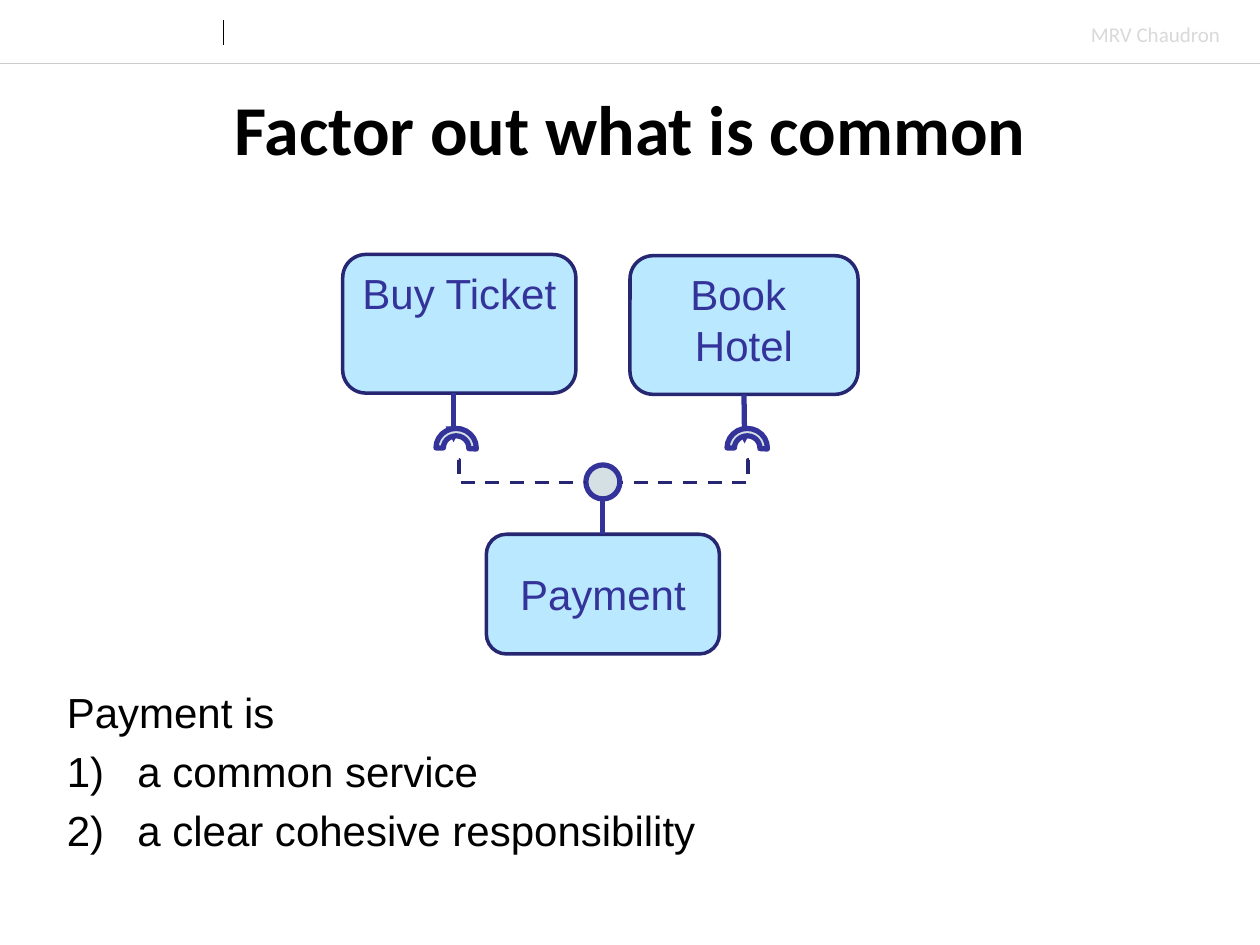
from lxml import etree
from pptx import Presentation
from pptx.dml.color import RGBColor
from pptx.enum.dml import MSO_LINE
from pptx.enum.shapes import MSO_CONNECTOR, MSO_SHAPE
from pptx.enum.text import MSO_ANCHOR, MSO_AUTO_SIZE, PP_ALIGN
from pptx.oxml.ns import qn
from pptx.util import Inches, Pt

STRAIGHT, ELBOW = MSO_CONNECTOR.STRAIGHT, MSO_CONNECTOR.ELBOW
ROUNDED, OVAL, ARC = MSO_SHAPE.ROUNDED_RECTANGLE, MSO_SHAPE.OVAL, MSO_SHAPE.BLOCK_ARC
TOP, MIDDLE, CENTER = MSO_ANCHOR.TOP, MSO_ANCHOR.MIDDLE, PP_ALIGN.CENTER
COLORS = {name: RGBColor.from_string(value) for name, value in {
    "black": "000000", "rule": "CCCCCC", "author": "D9D9D9", "box": "B9E8FF",
    "border": "262673", "ink": "333399", "port": "D5E0E5"}.items()}

prs = Presentation()
prs.slide_width, prs.slide_height = Inches(10), Inches(7.5)
COL, ROW = prs.slide_width / 100, prs.slide_height / 75
slide = prs.slides.add_slide(prs.slide_layouts[1])
shapes = slide.shapes


def grid(x, y, x2, y2):
    """Turn two column and row pairs into slide lengths."""
    return int(x * COL), int(y * ROW), int(x2 * COL), int(y2 * ROW)


def connect(kind, ends, color, width):
    """Draw a connector without a shadow."""
    line = shapes.add_connector(kind, *grid(*ends))
    line.line.color.rgb, line.line.width = COLORS[color], Pt(width)
    etree.SubElement(line._element.spPr, qn("a:effectLst"))
    return line


# Header
connect(STRAIGHT, (0, 5, 100, 5), "rule", 0.25)
connect(STRAIGHT, (17.7, 1.6, 17.7, 3.6), "black", 0.5)
author = shapes.add_textbox(*grid(85.6, 1.2, 12.3, 3)).text_frame
author.word_wrap = False
author.text = "MRV Chaudron"
font = author.paragraphs[0].font
font.name, font.size, font.color.rgb = "Calibri", Pt(12), COLORS["author"]

# Title
title = shapes.title
title.left, title.top, title.width, title.height = grid(0, 6, 100, 8.3)
title.text_frame.text = "Factor out what is common"
title.text_frame.vertical_anchor = MIDDLE
heading = title.text_frame.paragraphs[0]
heading.alignment = CENTER
font = heading.font
font.name, font.size, font.bold, font.color.rgb = "Calibri", Pt(40), True, COLORS["black"]

# Components
components = {}
for label, place, anchor in [
    ("Buy Ticket", (27.2, 20.2, 18.5, 11), TOP),
    ("Book \vHotel", (50, 20.3, 18.1, 11), TOP),
    ("Payment", (38.6, 42.4, 18.5, 9.5), MIDDLE),
]:
    component = shapes.add_shape(ROUNDED, *grid(*place))
    component.shadow.inherit = False
    component.fill.solid()
    component.fill.fore_color.rgb = COLORS["box"]
    component.line.color.rgb, component.line.width = COLORS["border"], Pt(2)
    frame = component.text_frame
    frame.margin_left = frame.margin_right = Inches(0.05)
    frame.word_wrap, frame.vertical_anchor = True, anchor
    frame.text = label
    frame.paragraphs[0].alignment = CENTER
    font = frame.paragraphs[0].font
    font.name, font.size, font.color.rgb = "Arial", Pt(24), COLORS["ink"]
    components[label] = component

# Stems from each component to its port
ticket_stem = connect(STRAIGHT, (36, 31.2, 36, 35.1), "ink", 3)
hotel_stem = connect(STRAIGHT, (59.1, 31.3, 59.1, 35.2), "ink", 3)
payment_stem = connect(STRAIGHT, (47.85, 42.4, 47.85, 38.3), "ink", 3)
hotel_stem.begin_connect(components["Book \vHotel"], 2)
payment_stem.begin_connect(components["Payment"], 0)
for stem in (ticket_stem, hotel_stem, payment_stem):
    etree.SubElement(stem.line._get_or_add_ln(), qn("a:tailEnd"), type="triangle")

# Ports: the provided interface and two required sockets
for kind, place in [
    (OVAL, (46.5, 36.9, 2.7, 2.7)),
    (ARC, (34.6, 34, 3.2, 3.1)),
    (ARC, (57.7, 34, 3.2, 3.1)),
]:
    port = shapes.add_shape(kind, *grid(*place))
    port.shadow.inherit = False
    port.fill.solid()
    port.fill.fore_color.rgb = COLORS["port"]
    port.line.color.rgb, port.line.width = COLORS["ink"], Pt(3)
    if kind == ARC:
        for index, value in enumerate((108, 1.83, 0.19)):
            port.adjustments[index] = value

# Dashed links from the sockets to the provided interface
for start, end in [(36.4, 46.5), (59.4, 49.4)]:
    link = connect(ELBOW, (start, 36.5, end, 38.3), "border", 2)
    link.line.dash_style = MSO_LINE.DASH
    guides = link._element.spPr.find(qn("a:prstGeom")).get_or_add_avLst()
    etree.SubElement(guides, qn("a:gd"), name="adj1", fmla="val 200")

# Conclusion
conclusion = slide.placeholders[1]
conclusion.left, conclusion.top, conclusion.width, conclusion.height = grid(4.3, 54, 93.7, 15)
frame = conclusion.text_frame
frame.auto_size = MSO_AUTO_SIZE.NONE
frame.text = "Payment is\na common service\na clear cohesive responsibility"
for index, item in enumerate(frame.paragraphs):
    props = item._p.get_or_add_pPr()
    hang = Inches(0.56) if index else 0
    props.set("marL", str(hang))
    props.set("indent", str(-hang))
    if index:
        etree.SubElement(props, qn("a:buFont"), typeface="+mj-lt")
        etree.SubElement(props, qn("a:buAutoNum"), type="arabicParenR")
    else:
        etree.SubElement(props, qn("a:buNone"))
    item.space_before = Pt(5 if index else 0)
    font = item.font
    font.name, font.size, font.color.rgb = "Arial", Pt(24), COLORS["black"]

prs.save("out.pptx")
